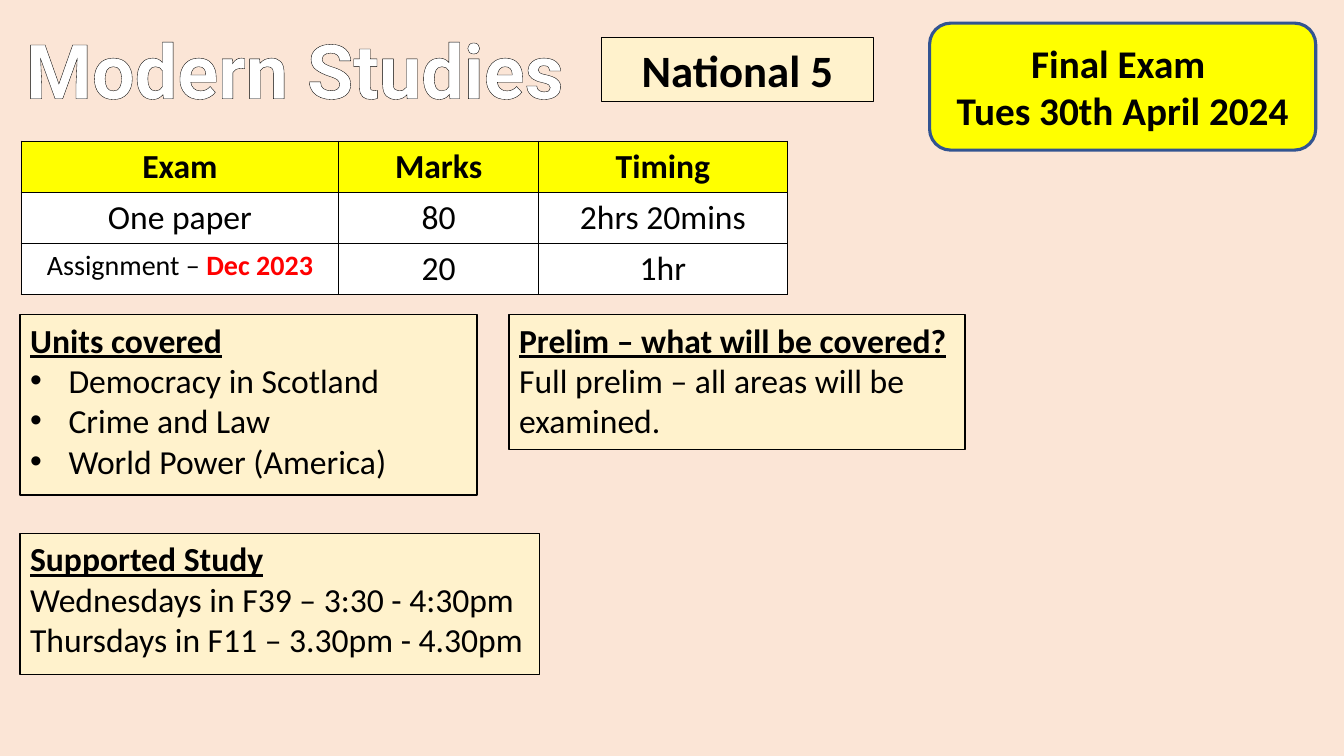
import lxml.etree
import pptx
import pptx.dml.color
import pptx.enum.shapes
import pptx.enum.text
import pptx.oxml.ns
import pptx.util

Inches, Pt = pptx.util.Inches, pptx.util.Pt
Anchor, Align = pptx.enum.text.MSO_ANCHOR, pptx.enum.text.PP_ALIGN
Kind = pptx.enum.shapes.MSO_SHAPE
qn = pptx.oxml.ns.qn

# Content
PEACH, CREAM, YELLOW, WHITE = "FBE5D6", "FFF2CC", "FFFF00", "FFFFFF"
BLACK, RED, BLUE = "000000", "FF0000", "325491"
TITLE = "Modern Studies"
LEVEL = ["National 5"]
DATE = ["Final Exam\u00a0", "Tues 30th April 2024"]
UNITS = ["Units covered", "Democracy in Scotland", "Crime and Law",
         "World Power (America)"]
NOTES = [
    ((0.2, 5.29, 5.15, 1.4),
     ["Supported Study", "Wednesdays in F39 – 3:30 - 4:30pm",
      "Thursdays in F11 – 3.30pm - 4.30pm"]),
    ((5.05, 3.12, 4.52, 1.34),
     ["Prelim – what will be covered?",
      "Full prelim – all areas will be examined."]),
]
WIDTHS = [3.15, 1.98, 2.47]
ROWS = [["Exam", "Marks", "Timing"],
        ["One paper", "80", "2hrs\u00a020mins"],
        ["Assignment – ", "20", "1hr"]]
DUE = "Dec 2023"


def rgb(color):
    return pptx.dml.color.RGBColor.from_string(color)


def add(parent, tag, **attrs):
    return lxml.etree.SubElement(parent, qn(tag), attrs)


def stroke(line, color):
    add(add(line, "a:solidFill"), "a:srgbClr", val=color)


def style(font, size, bold=False, color=BLACK, name="Calibri"):
    font.size, font.bold, font.name = Pt(size), bold, name
    font.color.rgb = rgb(color)


def place(shape, spot):
    shape.left, shape.top, shape.width, shape.height = map(Inches, spot)


def panel(shape, fill, edge, width):
    shape.shadow.inherit = False
    shape.fill.solid()
    shape.fill.fore_color.rgb = rgb(fill)
    shape.line.color.rgb = rgb(edge)
    shape.line.width = Pt(width)


def write(shape, lines, size, anchor, align, bold=False):
    frame = shape.text_frame
    frame.word_wrap = True
    frame.auto_size = pptx.enum.text.MSO_AUTO_SIZE.NONE
    frame.vertical_anchor = anchor
    frame.text = "\n".join(lines)
    for para in frame.paragraphs:
        para.alignment, para.space_before = align, Pt(0)
        style(para.font, size, bold)
    return frame.paragraphs


def note(shape, lines):
    panel(shape, CREAM, BLACK, 1)
    paras = write(shape, lines, 24, Anchor.TOP, Align.LEFT)
    paras[0].font.bold = paras[0].font.underline = True
    return paras


def badge(kind, spot, lines, size, fill, edge, width):
    shape = slide.shapes.add_shape(kind, *map(Inches, spot))
    panel(shape, fill, edge, width)
    write(shape, lines, size, Anchor.MIDDLE, Align.CENTER, True)


deck = pptx.Presentation()
deck.slide_width, deck.slide_height = Inches(13.33), Inches(7.5)
slide = deck.slides.add_slide(deck.slide_layouts[1])
slide.background.fill.solid()
slide.background.fill.fore_color.rgb = rgb(PEACH)
title, body = slide.placeholders

# Title with outlined letters
place(title, (0.1, 0.18, 5.65, 1.04))
para = write(title, [TITLE], 54, Anchor.TOP, Align.CENTER)[0]
title.text_frame.word_wrap = False
run = para.runs[0]
line = add(run.font._element, "a:ln", w=str(Pt(2.25)))
stroke(line, BLACK)
style(run.font, 54, True, WHITE, "Roboto")

# Level and exam date
badge(Kind.RECTANGLE, (5.97, 0.37, 2.69, 0.64), LEVEL, 32, CREAM, BLACK, 0.75)
badge(Kind.ROUNDED_RECTANGLE, (9.22, 0.23, 3.83, 1.26), DATE, 28,
      YELLOW, BLUE, 2.25)

# Units list
place(body, (0.2, 3.12, 4.53, 1.79))
for i, para in enumerate(note(body, UNITS)):
    props = para._p.get_or_add_pPr()
    indent = Inches(0.38) if i else 0
    props.set("marL", str(indent))
    props.set("indent", str(-indent))
    if i:
        mark = lxml.etree.Element(qn("a:buChar"), char="•")
    else:
        mark = lxml.etree.Element(qn("a:buNone"))
    props.find(qn("a:defRPr")).addprevious(mark)

# Study and prelim notes
for spot, lines in NOTES:
    note(slide.shapes.add_shape(Kind.RECTANGLE, *map(Inches, spot)), lines)

# Exam table
spot = (0.21, 1.4, sum(WIDTHS), 0.5 * len(ROWS))
table = slide.shapes.add_table(len(ROWS), len(WIDTHS),
                               *map(Inches, spot)).table
for col, width in zip(table.columns, WIDTHS):
    col.width = Inches(width)
for r, row in enumerate(ROWS):
    for c, text in enumerate(row):
        cell = table.cell(r, c)
        props = cell._tc.get_or_add_tcPr()
        for side in "LRTB":
            stroke(add(props, "a:ln" + side, w=str(Pt(1))), BLACK)
        cell.fill.solid()
        cell.fill.fore_color.rgb = rgb(WHITE if r else YELLOW)
        cell.text = text
        para = cell.text_frame.paragraphs[0]
        para.alignment = Align.CENTER
        style(para.font, 24, r == 0)

# Assignment cell is smaller, with its date in red
para = table.cell(2, 0).text_frame.paragraphs[0]
para.font.size = Pt(20)
due = para.add_run()
due.text = DUE
style(due.font, 20, True, RED)

deck.save("out.pptx")
